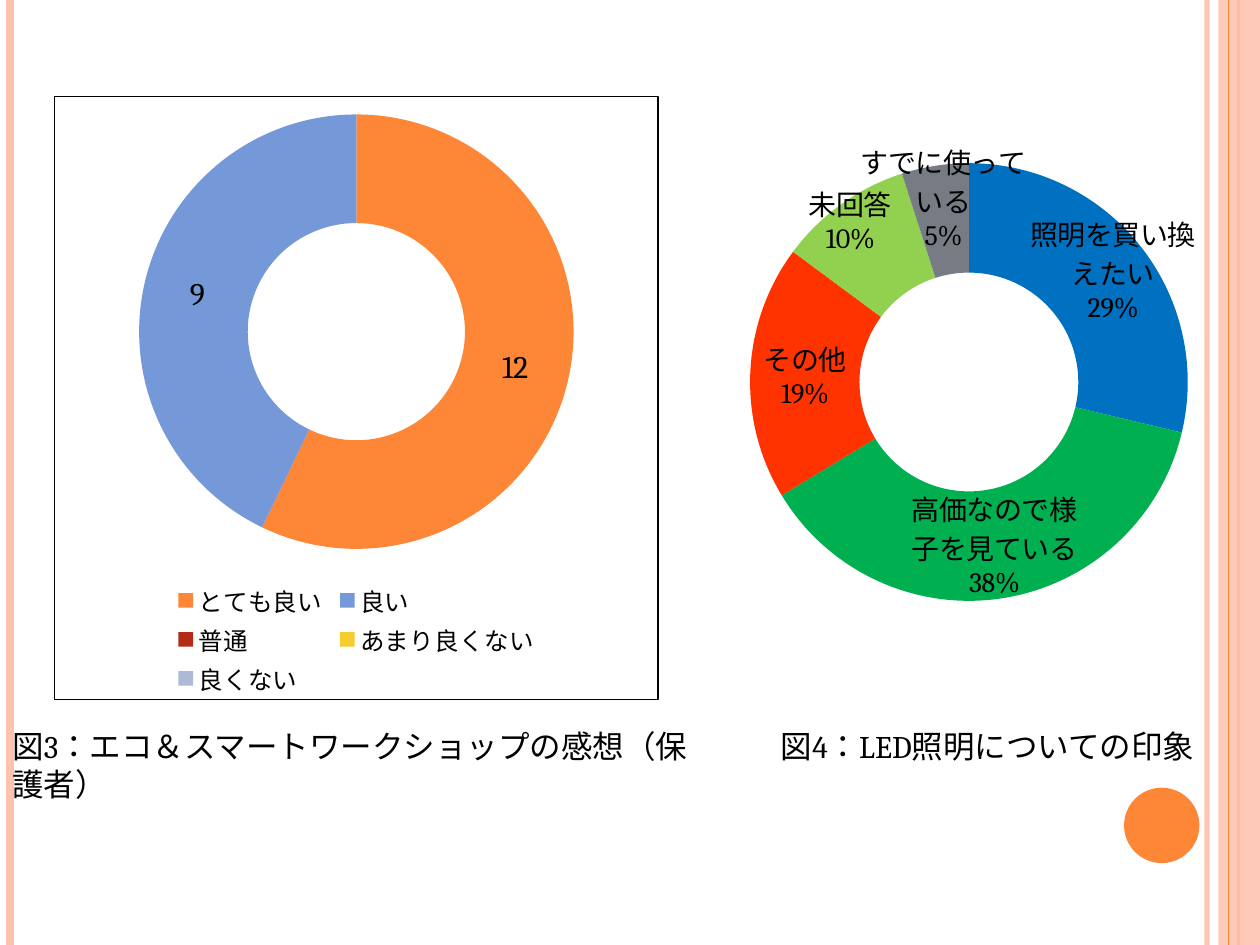
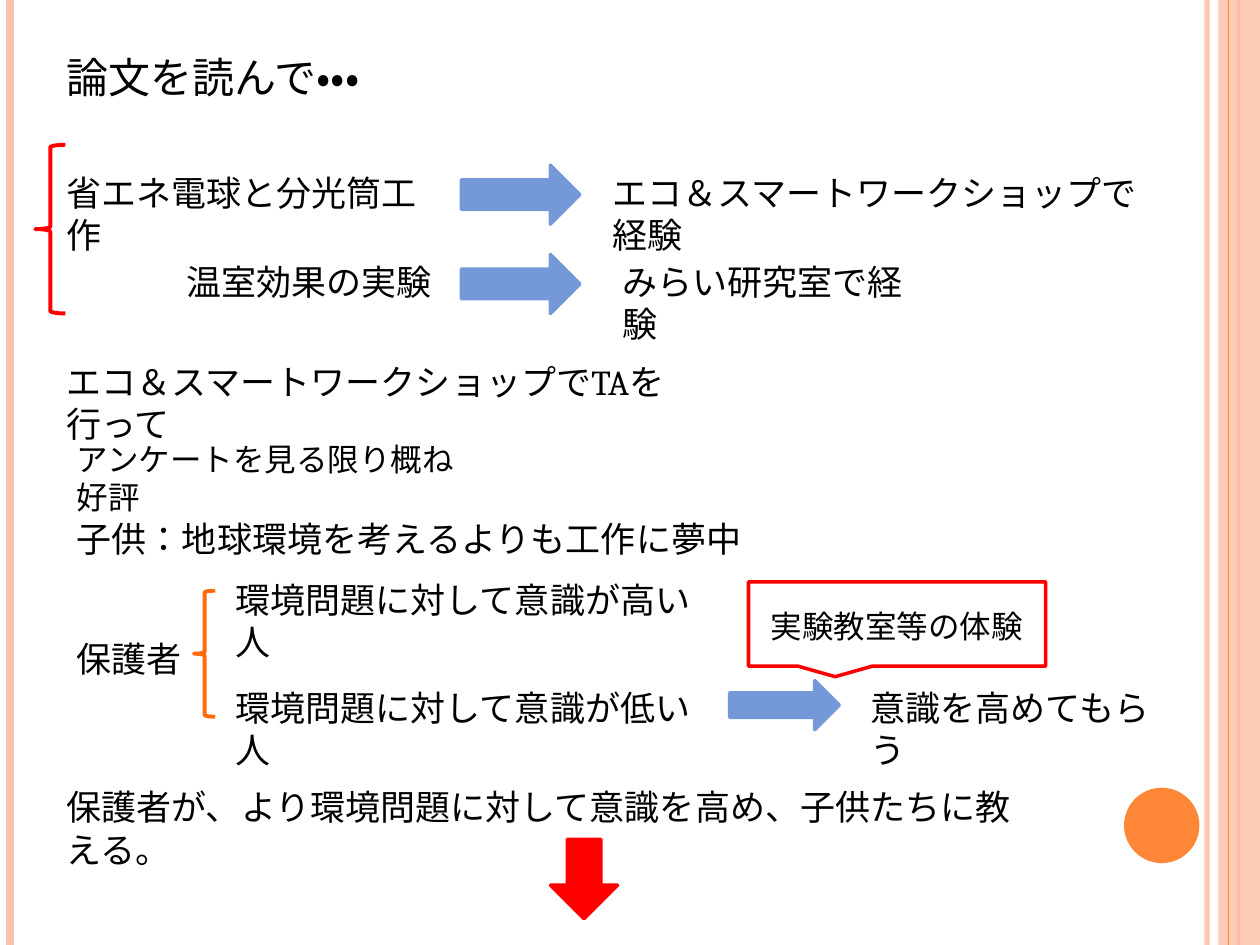
"""Builds two slides about a workshop survey and what was learned from it."""
from copy import deepcopy
from dataclasses import dataclass

from lxml import etree
from pptx import Presentation
from pptx import util as u
from pptx.chart import data as chart_data
from pptx.dml import color
from pptx.enum import chart as charts, lang, shapes, text
from pptx.oxml import ns

Cm, Pt = u.Cm, u.Pt
KIND = shapes.MSO_SHAPE


@dataclass(frozen=True)
class Theme:
    font: str = "Cambria"
    ink: str = "000000"
    paper: str = "FFFFFF"
    orange: str = "FE8637"
    peach: str = "FEC3AE"
    blue: str = "7598D9"
    red: str = "FF0000"
    brace: str = "FF6B0A"
    feelings: tuple = ("FE8637", "7598D9", "B32C16", "F5CD2D", "AEBAD5")
    impressions: tuple = ("0070C0", "00B050", "B32C16", "FF3300", "92D050", "777C84")
    title: int = 24
    body: int = 20
    note: int = 18
    label: int = 16
    legend: int = 14
    small: int = 10


def rgb(value):
    return color.RGBColor.from_string(value)


def add_node(parent, tag, **attributes):
    return etree.SubElement(parent, ns.qn(tag), attributes)


def set_alpha(shape, percent):
    for tint in shape.element.xpath("./p:spPr//a:srgbClr"):
        add_node(tint, "a:alpha", val=str(percent * 1000))


def manual_layout(x, y, width=None, height=None):
    layout = etree.Element(ns.qn("c:layout"))
    manual = add_node(layout, "c:manualLayout")
    if width:
        add_node(manual, "c:xMode", val="edge")
        add_node(manual, "c:yMode", val="edge")
    for tag, value in zip("xywh", (x, y, width, height)):
        if value is not None:
            add_node(manual, f"c:{tag}", val=str(value))
    return layout


def place_part(part, index, layout):
    for old in part.findall(ns.qn("c:layout")):
        part.remove(old)
    part.insert(index, layout)


class Builder:
    def __init__(self, theme):
        self.theme = theme
        self.deck = Presentation()
        self.deck.slide_width, self.deck.slide_height = Cm(25.4), Cm(19.05)
        self.page = None

    def new_page(self, layout):
        self.page = self.deck.slides.add_slide(self.deck.slide_layouts[layout])

    def put_words(self, box, words, size):
        frame = box.text_frame
        frame.word_wrap = True
        frame.auto_size = text.MSO_AUTO_SIZE.SHAPE_TO_FIT_TEXT
        frame.vertical_anchor = text.MSO_ANCHOR.TOP
        para = frame.paragraphs[0]
        para.alignment = text.PP_ALIGN.LEFT
        span = para.add_run()
        span.text = words
        span.font.language_id = lang.MSO_LANGUAGE_ID.JAPANESE
        self.style(span.font, size)

    def style(self, font, size):
        font.name, font.size = self.theme.font, Pt(size)
        font.color.rgb = rgb(self.theme.ink)

    def title(self, words, left, top, width, height):
        box = self.page.shapes.title
        box.left, box.top, box.width, box.height = map(Cm, (left, top, width, height))
        self.put_words(box, words, self.theme.title)

    def label(self, words, left, top, width, size=None, height=1.12):
        box = self.page.shapes.add_textbox(*map(Cm, (left, top, width, height)))
        self.put_words(box, words, size or self.theme.body)

    def shape(self, kind, left, top, width, height, fill=None, line=None, weight=2):
        box = self.page.shapes.add_shape(kind, *map(Cm, (left, top, width, height)))
        box.shadow.inherit = False
        if fill:
            box.fill.solid()
            box.fill.fore_color.rgb = rgb(fill)
        else:
            box.fill.background()
        if line:
            box.line.color.rgb = rgb(line)
            box.line.width = Pt(weight)
        else:
            box.line.fill.background()
        return box

    def arrow(self, left, top, width=2.39, height=1.19):
        blue = self.theme.blue
        self.shape(KIND.RIGHT_ARROW, left, top, width, height, blue, blue)

    def rule(self, x, tint, weight):
        rule = self.page.shapes.add_connector(
            shapes.MSO_CONNECTOR.STRAIGHT, Cm(x), 0, Cm(x), self.deck.slide_height)
        rule.line.color.rgb = rgb(tint)
        rule.line.width = Pt(weight)
        add_node(rule.element.spPr, "a:effectLst")
        return rule

    def decorate_master(self):
        theme = self.theme
        pale_rule = self.rule(24.33, theme.peach, 3)
        set_alpha(pale_rule, 93)
        left_rule = self.rule(0.2, theme.peach, 4.5)
        band_rule = self.rule(24.97, theme.orange, 1.5)
        band = self.shape(KIND.RECTANGLE, 24.56, 0, 0.84, 19.05, theme.peach)
        set_alpha(band, 87)
        thin_rule = self.rule(24.77, theme.orange, 0.75)
        disc = self.shape(KIND.OVAL, 22.66, 15.88, 1.52, 1.52, theme.orange)
        parts = (pale_rule, left_rule, band_rule, band, thin_rule, disc)
        for number, part in enumerate(parts, 100):
            part.element.xpath(".//p:cNvPr")[0].set("id", str(number))
            self.deck.slide_master.shapes.element.append(part.element)

    def doughnut(self, place, answers, tints, ring, size, shares=False):
        data = chart_data.CategoryChartData()
        data.categories = [answer for answer, count in answers]
        data.add_series("Series 1", [count for answer, count in answers])
        chart = self.page.shapes.add_chart(
            charts.XL_CHART_TYPE.DOUGHNUT, *map(Cm, place), data).chart
        chart.has_title = chart.has_legend = False
        self.style(chart.font, self.theme.small)
        plot = chart.plots[0]
        plot.vary_by_categories = True
        series = plot.series[0]
        for index, tint in enumerate(tints):
            fill = series.points[index].format.fill
            fill.solid()
            fill.fore_color.rgb = rgb(tint)
        labels = series.data_labels
        labels.show_value = not shares
        labels.show_percentage = labels.show_category_name = shares
        labels.number_format = "0%;;" if shares else "0;;"
        labels.number_format_is_linked = False
        self.style(labels.font, size)
        place_part(chart.element.xpath(".//c:plotArea")[0], 0, manual_layout(*ring))
        return chart

    def shift_labels(self, chart, shifts):
        labels = chart.element.xpath(".//c:ser/c:dLbls")[0]
        shared = [part for part in labels if part.tag != ns.qn("c:showLeaderLines")]
        for position, (index, shift) in enumerate(shifts.items()):
            label = etree.Element(ns.qn("c:dLbl"))
            add_node(label, "c:idx", val=str(index))
            label.append(manual_layout(*shift))
            label.extend(deepcopy(part) for part in shared)
            labels.insert(position, label)

    def frame_chart(self, chart, tint=None):
        frame = etree.Element(ns.qn("c:spPr"))
        add_node(frame, "a:noFill")
        line = add_node(frame, "a:ln", w=str(Pt(0.75)))
        if tint:
            add_node(add_node(line, "a:solidFill"), "a:srgbClr", val=tint)
        else:
            add_node(line, "a:noFill")
        chart.element.find(ns.qn("c:chart")).addnext(frame)

    def legend(self, chart, area):
        chart.has_legend = True
        chart.legend.position = charts.XL_LEGEND_POSITION.BOTTOM
        chart.legend.include_in_layout = False
        self.style(chart.legend.font, self.theme.legend)
        place_part(chart.element.xpath(".//c:legend")[0], 1, manual_layout(*area))


def survey_page(build):
    theme = build.theme
    feelings = [("とても良い", 12), ("良い", 9), ("普通", 0),
                ("あまり良くない", 0), ("良くない", 0)]
    chart = build.doughnut((1.09, 1.93, 12.19, 12.19), feelings, theme.feelings,
                           (0.14, 0.03, 0.72, 0.72), theme.note)
    build.legend(chart, (0.19, 0.8, 0.62, 0.2))
    build.frame_chart(chart, theme.ink)
    build.label("図3：エコ＆スマートワークショップの感想（保護者）",
                0, 14.53, 14.4, theme.note, 1.8)

    impressions = [("照明を買い換えたい", 29), ("高価なので様子を見ている", 38), ("", None),
                   ("その他", 19), ("未回答", 10), ("すでに使っている", 5)]
    chart = build.doughnut((11.71, 2.13, 15.49, 11.61), impressions, theme.impressions,
                           (0.22, 0.1, 0.57, 0.76), theme.label, shares=True)
    build.shift_labels(chart, {0: (0.02, -0.02), 4: (-0.03, -0.05), 5: (0, -0.04)})
    build.frame_chart(chart)
    build.label("図4：LED照明についての印象", 15.49, 14.53, 8.84, theme.note, 1.02)


def reflection_page(build):
    theme = build.theme
    build.shape(KIND.RECTANGULAR_CALLOUT, 15.09, 11.73, 5.99, 1.7, theme.paper, theme.red)
    build.title("論文を読んで・・・", 1.09, 0.91, 6.68, 1.27)

    experiences = [
        (3.33, ("省エネ電球と分光筒工作", 1.09, 8.05),
         ("エコ＆スマートワークショップで経験", 12.09, 11.1)),
        (5.13, ("温室効果の実験", 3.51, 5.51), ("みらい研究室で経験", 12.29, 6.68)),
    ]
    for top, *sides in experiences:
        for words, left, width in sides:
            build.label(words, left, top, width)
        build.arrow(9.3, top)
    build.shape(KIND.LEFT_BRACE, 0.71, 2.92, 0.61, 3.4, line=theme.red, weight=2.25)

    build.label("エコ＆スマートワークショップでTAを行って", 1.09, 7.14, 12.93)
    build.label("アンケートを見る限り概ね好評", 1.3, 8.74, 8.69, theme.note, 1.02)
    build.label("子供：地球環境を考えるよりも工作に夢中", 1.3, 10.31, 15.8)
    build.label("保護者", 1.3, 12.73, 3.2)
    build.shape(KIND.LEFT_BRACE, 3.91, 11.91, 0.43, 2.54, line=theme.brace, weight=2.25)
    for level, top in (("高い", 11.53), ("低い", 13.72)):
        build.label(f"環境問題に対して意識が{level}人", 4.5, top, 10.16)
    build.arrow(14.71, 13.72, 2.21, 0.99)
    build.label("意識を高めてもらう", 17.3, 13.72, 6.25)
    build.label("実験教室等の体験", 15.29, 12.12, 5.64, theme.note, 1.02)
    build.label("保護者が、より環境問題に対して意識を高め、子供たちに教える。",
                1.09, 15.72, 20.14)
    build.shape(KIND.DOWN_ARROW, 11.1, 16.92, 1.35, 1.6, theme.red, theme.red)


def main():
    title_only, blank = 5, 6
    build = Builder(Theme())
    build.new_page(blank)
    build.decorate_master()
    survey_page(build)
    build.new_page(title_only)
    reflection_page(build)
    build.deck.save("out.pptx")


if __name__ == "__main__":
    main()
